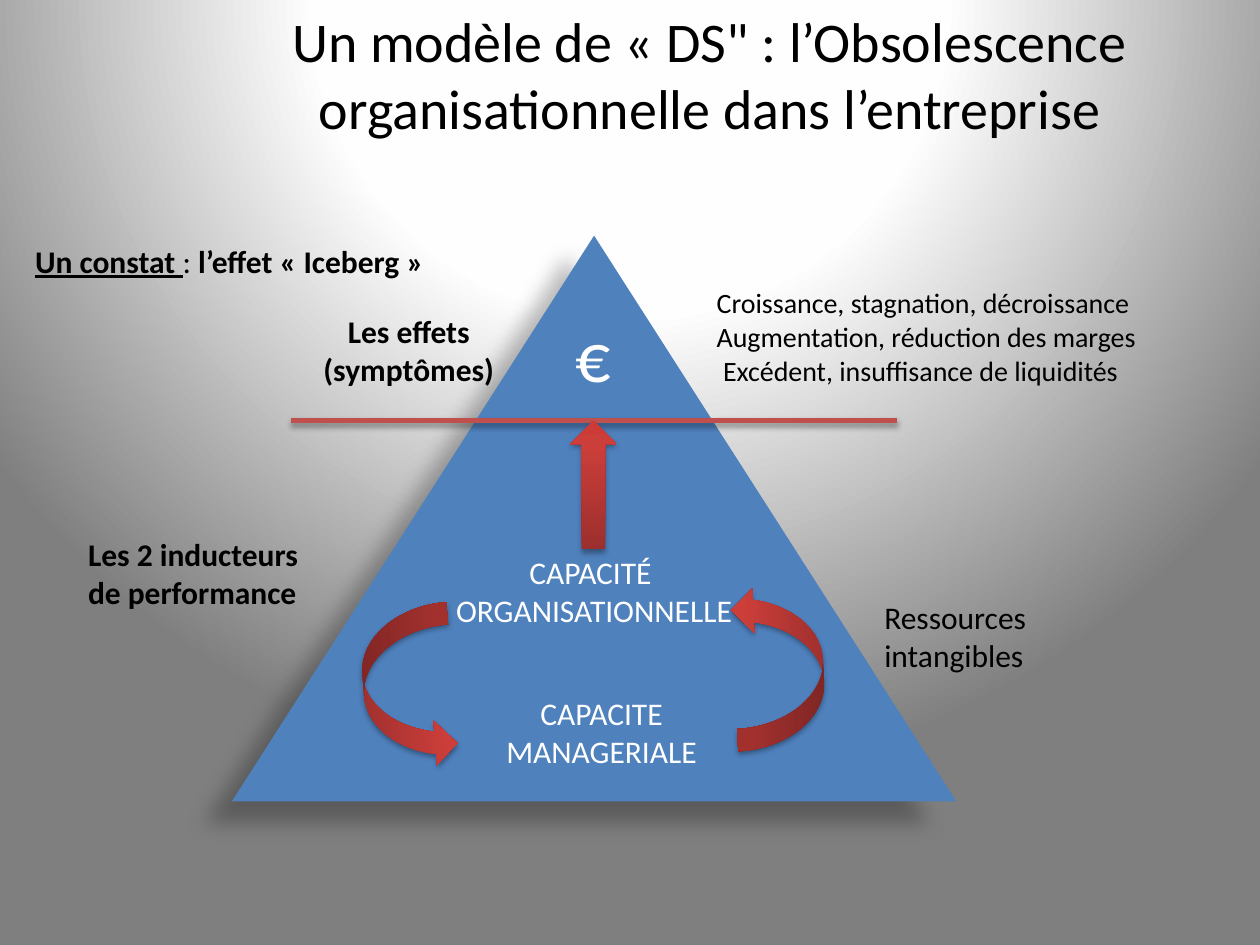
from pptx import Presentation
from pptx.dml.color import RGBColor
from pptx.enum.shapes import MSO_CONNECTOR, MSO_SHAPE
from pptx.enum.text import MSO_AUTO_SIZE, PP_ALIGN
from pptx.oxml import parse_xml
from pptx.oxml.ns import qn
from pptx.util import Inches, Pt

HUES = {"ink": "000000", "white": "FFFFFF", "blue": "4F81BD", "line": "C0504D",
        "dark": "9C2F2D", "mid": "CB3E3A", "light": "CE3B37",
        "glow": "FEFEFE", "gray": "7F7F7F"}
NS = ('xmlns:a="http://schemas.openxmlformats.org/drawingml/2006/main" '
      'xmlns:p="http://schemas.openxmlformats.org/presentationml/2006/main"')
LEFT, MID = PP_ALIGN.LEFT, PP_ALIGN.CENTER


def grad_xml(stops, shade):
    marks = "".join(f'<a:gs pos="{pos * 1000}"><a:srgbClr val="{HUES[hue]}"/></a:gs>'
                    for pos, hue in stops)
    return f'<a:gradFill {NS} rotWithShape="1"><a:gsLst>{marks}</a:gsLst>{shade}</a:gradFill>'


def add_shade(shape, alpha=35, blur=3.15, dist=1.8, angle=90):
    props = shape._element.spPr
    for old in props.findall(qn("a:effectLst")):
        props.remove(old)
    props.append(parse_xml(
        f'<a:effectLst {NS}><a:outerShdw blurRad="{Pt(blur)}" dist="{Pt(dist)}" '
        f'dir="{angle * 60000}" algn="ctr" rotWithShape="0"><a:srgbClr val="{HUES["ink"]}">'
        f'<a:alpha val="{alpha * 1000}"/></a:srgbClr></a:outerShdw></a:effectLst>'))


def add_label(slide, box, lines, size=18, hue="ink", align=LEFT, wrap=False):
    """Each line is a list of runs: (text, bold, underline)."""
    frame = slide.shapes.add_textbox(*map(Inches, box)).text_frame
    frame.word_wrap = wrap
    frame.auto_size = MSO_AUTO_SIZE.SHAPE_TO_FIT_TEXT
    for num, runs in enumerate(lines):
        para = frame.add_paragraph() if num else frame.paragraphs[0]
        para.alignment = align
        for text, bold, under in runs:
            run = para.add_run()
            run.text = text
            font = run.font
            font.name, font.size = "Calibri", Pt(size)
            font.bold, font.underline = bold, under
            font.color.rgb = RGBColor.from_string(HUES[hue])


def plain(*texts, bold=False):
    return [[(text, bold, False)] for text in texts]


def add_arrow(slide, kind, box, turn=0):
    arrow = slide.shapes.add_shape(kind, *map(Inches, box))
    arrow.rotation = turn
    arrow.line.fill.background()
    stops = [(0, "dark"), (80, "mid"), (100, "light")]
    fill = parse_xml(grad_xml(stops, '<a:lin ang="16200000" scaled="0"/>'))
    arrow._element.spPr.find(qn("a:prstGeom")).addnext(fill)
    add_shade(arrow)


def paint_back(slide):
    stops = [(0, "white"), (40, "glow"), (100, "gray")]
    shade = ('<a:path path="circle"><a:fillToRect l="50000" t="-80000" '
             'r="50000" b="180000"/></a:path>')
    slide._element.cSld.insert(0, parse_xml(
        f'<p:bg {NS}><p:bgPr>{grad_xml(stops, shade)}<a:effectLst/></p:bgPr></p:bg>'))


def draw_berg(slide, left, top, width, height):
    # Iceberg body
    berg = slide.shapes.add_shape(MSO_SHAPE.ISOSCELES_TRIANGLE,
                                  *map(Inches, (left, top, width, height)))
    berg.fill.solid()
    berg.fill.fore_color.rgb = RGBColor.from_string(HUES["blue"])
    berg.line.fill.background()
    add_shade(berg, 28, 11.8, 19.7, 141)

    # Water line
    sea = top + 1.47
    line = slide.shapes.add_connector(
        MSO_CONNECTOR.STRAIGHT, *map(Inches, (left + 0.47, sea, left + 5.28, sea)))
    line.line.color.rgb = RGBColor.from_string(HUES["line"])
    line.line.width = Pt(3)
    add_shade(line)

    # Arrows: the loop between both capacities, then the rise to the tip
    loop = MSO_SHAPE.CURVED_UP_ARROW
    add_arrow(slide, loop, (left + 3.69, top + 3.07, 1.3, 0.71), 267)
    add_arrow(slide, loop, (left + 0.75, top + 3.23, 1.3, 0.71), 85.4)
    add_arrow(slide, MSO_SHAPE.UP_ARROW, (left + width / 2 - 0.19, sea, 0.37, 1.02))

    # Words inside the iceberg
    add_label(slide, (left + 2.63, top + 0.56, 0.49, 0.77), plain("€"), 40, "white")
    add_label(slide, (left + 1.67, top + 2.47, 2.41, 0.71),
              plain("CAPACITÉ ", "ORGANISATIONNELLE"), hue="white", align=MID)
    add_label(slide, (left + 1.92, top + 3.59, 2.03, 0.71),
              plain("CAPACITE", "MANAGERIALE"), hue="white", align=MID, wrap=True)


def add_notes(slide, left, top):
    # Remarks around the iceberg
    add_label(slide, (left, top, 3.33, 0.4),
              [[("Un constat ", True, True), (": ", False, False),
                ("l’effet « Iceberg »", True, False)]])
    add_label(slide, (left + 2.28, top + 0.56, 1.57, 0.71),
              plain("Les effets", "(symptômes)", bold=True), align=MID)
    add_label(slide, (left + 5.41, top + 0.35, 3.57, 0.91),
              plain("Croissance, stagnation, décroissance",
                    "Augmentation, réduction des marges",
                    " Excédent, insuffisance de liquidités"), 16)
    add_label(slide, (left + 0.42, top + 2.33, 1.88, 0.71),
              plain("Les 2 inducteurs", "de performance", bold=True))
    add_label(slide, (left + 6.74, top + 2.83, 1.34, 0.71),
              plain("Ressources", "intangibles"))


def add_title(slide, box):
    add_label(slide, box,
              plain("Un modèle de « DS\" : l’Obsolescence organisationnelle dans l’entreprise"),
              32, align=MID, wrap=True)


def main():
    deck = Presentation()
    deck.slide_width, deck.slide_height = Inches(10), Inches(7.5)
    slide = deck.slides.add_slide(deck.slide_layouts[6])
    paint_back(slide)
    draw_berg(slide, 1.84, 1.87, 5.75, 4.49)
    add_notes(slide, 0.18, 1.87)
    add_title(slide, (1.7, 0, 7.87, 1.18))
    deck.save("out.pptx")


if __name__ == "__main__":
    main()
